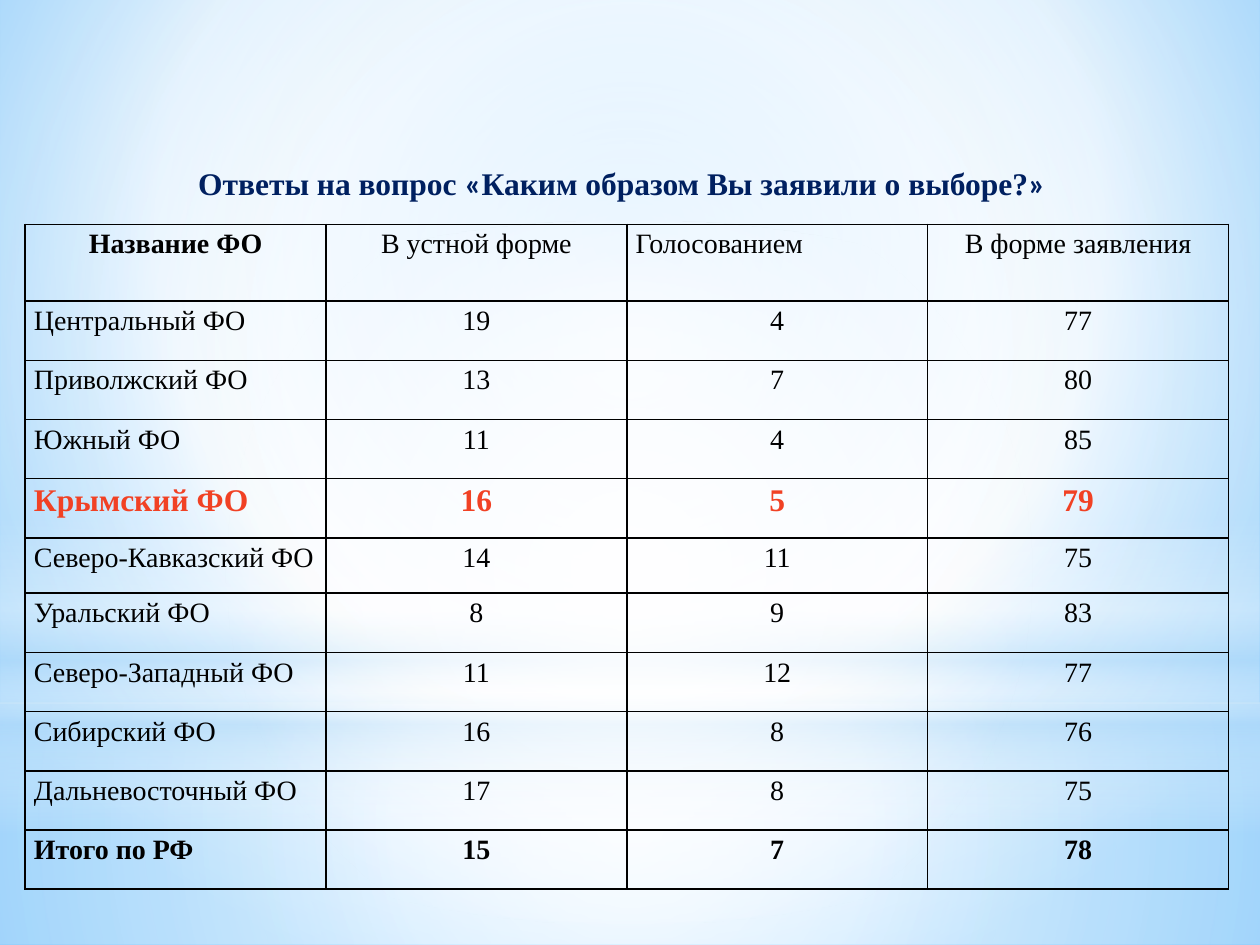
from dataclasses import dataclass
from pptx import Presentation
from pptx.dml.color import RGBColor
from pptx.enum.shapes import MSO_SHAPE as Shape
from pptx.enum.text import MSO_ANCHOR as Anchor, MSO_AUTO_SIZE as AutoSize, PP_ALIGN as Align
from pptx.oxml import parse_xml
from pptx.oxml.ns import nsdecls, qn
from pptx.util import Inches, Pt


@dataclass(frozen=True)
class Theme:
    text: str = "000000"
    title: str = "002060"
    accent: str = "F14124"
    white: str = "FFFFFF"
    haze: str = "B4DCFA"
    sky: str = "9ED5FF"
    deep_sky: str = "5BB9FF"
    font: str = "Times New Roman"
    quote_font: str = "Calibri"
    body_size: int = 16
    large_size: int = 18
    border: int = 1
    line_spacing: float = 1.15


THEME = Theme()
WIDTH, HEIGHT = 10, 7.5
CENTRE = (50, 50, 50, 50)

TITLE = [
    ("Ответы на вопрос ", THEME.font),
    ("«", THEME.quote_font),
    ("Каким образом Вы заявили о выборе?", THEME.font),
    ("»", THEME.quote_font),
]
HEADER = ("Название ФО", "В устной форме", "Голосованием", "В форме заявления")
ROWS = [
    ("Центральный ФО", 19, 4, 77),
    ("Приволжский ФО", 13, 7, 80),
    ("Южный ФО", 11, 4, 85),
    ("Крымский ФО", 16, 5, 79),
    ("Северо-Кавказский ФО", 14, 11, 75),
    ("Уральский ФО", 8, 9, 83),
    ("Северо-Западный ФО", 11, 12, 77),
    ("Сибирский ФО", 16, 8, 76),
    ("Дальневосточный ФО", 17, 8, 75),
    ("Итого по РФ", 15, 7, 78),
]
HIGHLIGHT, COMPACT, TOTAL = 4, 5, len(ROWS)
HEADER_HEIGHT, ROW_HEIGHT, COMPACT_HEIGHT = 0.61, 0.47, 0.44

BACKGROUND = [(0, THEME.sky, 100), (60, THEME.white, 100), (100, THEME.deep_sky, 100)]
GLOWS = [
    (Shape.RECTANGLE, 5.58, 1.92, CENTRE,
     [(0, THEME.white, 91), (37, THEME.white, 76), (100, THEME.haze, 79)]),
    (Shape.RECTANGLE, 0, 5.58, CENTRE,
     [(0, THEME.white, 89), (48, THEME.white, 62), (100, THEME.haze, 79)]),
    (Shape.RECTANGLE, 4.12, 2.5, None,
     [(0, THEME.white, 0), (29, THEME.white, 30), (45, THEME.haze, 40),
      (55, THEME.white, 26), (65, THEME.haze, 60), (100, THEME.white, 0)]),
    (Shape.OVAL, 1.75, 5.58, CENTRE,
     [(0, THEME.white, 100), (56, THEME.white, 0)]),
]


def set_gradient(fill, parent, stops, focus):
    fill.solid()
    stop_xml = "".join(
        f'<a:gs pos="{position * 1000}"><a:srgbClr val="{color}">'
        f'<a:alpha val="{opacity * 1000}"/></a:srgbClr></a:gs>'
        for position, color, opacity in stops
    )
    if focus:
        sides = " ".join(f'{side}="{share * 1000}"' for side, share in zip("ltrb", focus))
        direction = f'<a:path path="circle"><a:fillToRect {sides}/></a:path>'
    else:
        direction = '<a:lin ang="5400000" scaled="0"/>'
    gradient = parse_xml(
        f'<a:gradFill {nsdecls("a")} rotWithShape="1"><a:gsLst>{stop_xml}</a:gsLst>'
        f'{direction}</a:gradFill>'
    )
    parent.replace(parent.find(qn("a:solidFill")), gradient)


def format_run(run, size, color, bold, font=THEME.font):
    run.font.name = font
    run.font.size = Pt(size)
    run.font.bold = bold
    run.font.color.rgb = RGBColor.from_string(color)


def add_backdrop(slide):
    fill = slide.background.fill
    fill.solid()
    set_gradient(fill, slide.element.find(".//" + qn("p:bgPr")), BACKGROUND, (20, 10, 20, 60))
    for kind, top, height, focus, stops in GLOWS:
        shape = slide.shapes.add_shape(kind, 0, Inches(top), Inches(WIDTH), Inches(height))
        shape.shadow.inherit = False
        shape.line.fill.background()
        set_gradient(shape.fill, shape.element.spPr, stops, focus)


def format_cell(cell, row, column):
    cell.margin_left = cell.margin_right = Inches(0.07)
    cell.margin_top = cell.margin_bottom = 0
    cell.vertical_anchor = Anchor.TOP
    properties = cell._tc.get_or_add_tcPr()
    for side in "LRTB":
        properties.append(parse_xml(
            f'<a:ln{side} {nsdecls("a")} w="{Pt(THEME.border)}"><a:solidFill>'
            f'<a:srgbClr val="{THEME.text}"/></a:solidFill></a:ln{side}>'
        ))
    cell.fill.background()
    paragraph = cell.text_frame.paragraphs[0]
    paragraph.line_spacing = THEME.line_spacing
    if row == 0:
        paragraph.alignment = Align.LEFT if column == 2 else Align.CENTER
    else:
        paragraph.alignment = Align.CENTER if column else Align.JUSTIFY
    highlighted = row == HIGHLIGHT
    format_run(
        paragraph.runs[0],
        THEME.large_size if highlighted else THEME.body_size,
        THEME.accent if highlighted else THEME.text,
        row in (HIGHLIGHT, TOTAL) or (row, column) == (0, 0),
    )


def add_results(slide):
    records = [HEADER, *ROWS]
    heights = [ROW_HEIGHT] * len(records)
    heights[0], heights[COMPACT] = HEADER_HEIGHT, COMPACT_HEIGHT
    table = slide.shapes.add_table(
        len(records), len(HEADER), Inches(0.2), Inches(1.78), Inches(9.55), Inches(sum(heights))
    ).table
    table.first_row = table.horz_banding = False
    for row, (record, height) in enumerate(zip(records, heights)):
        table.rows[row].height = Inches(height)
        for column, value in enumerate(record):
            cell = table.cell(row, column)
            cell.text_frame.text = str(value)
            format_cell(cell, row, column)


def place_title(slide):
    title = slide.shapes.title
    title.left, title.top, title.width, title.height = map(Inches, (0.12, 1.25, 9.63, 0.4))
    frame = title.text_frame
    frame.word_wrap = True
    frame.auto_size = AutoSize.SHAPE_TO_FIT_TEXT
    frame.vertical_anchor = Anchor.MIDDLE
    paragraph = frame.paragraphs[0]
    paragraph.alignment = Align.CENTER
    for text, font in TITLE:
        run = paragraph.add_run()
        run.text = text
        format_run(run, THEME.large_size, THEME.title, True, font)
    slide.shapes.element.append(title.element)


def main():
    presentation = Presentation()
    presentation.slide_width, presentation.slide_height = Inches(WIDTH), Inches(HEIGHT)
    slide = presentation.slides.add_slide(presentation.slide_layouts[5])
    add_backdrop(slide)
    add_results(slide)
    place_title(slide)
    presentation.save("out.pptx")


if __name__ == "__main__":
    main()
